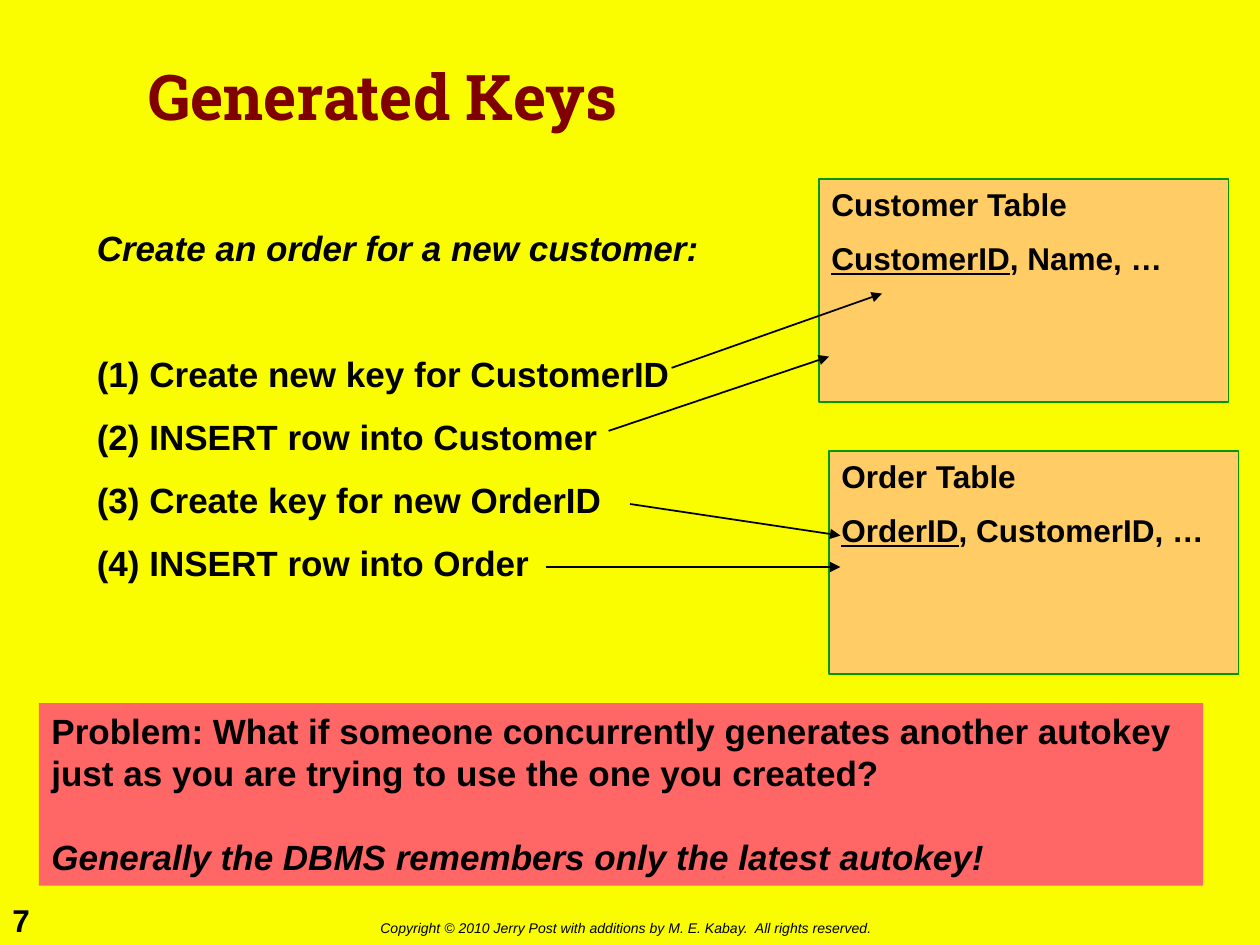
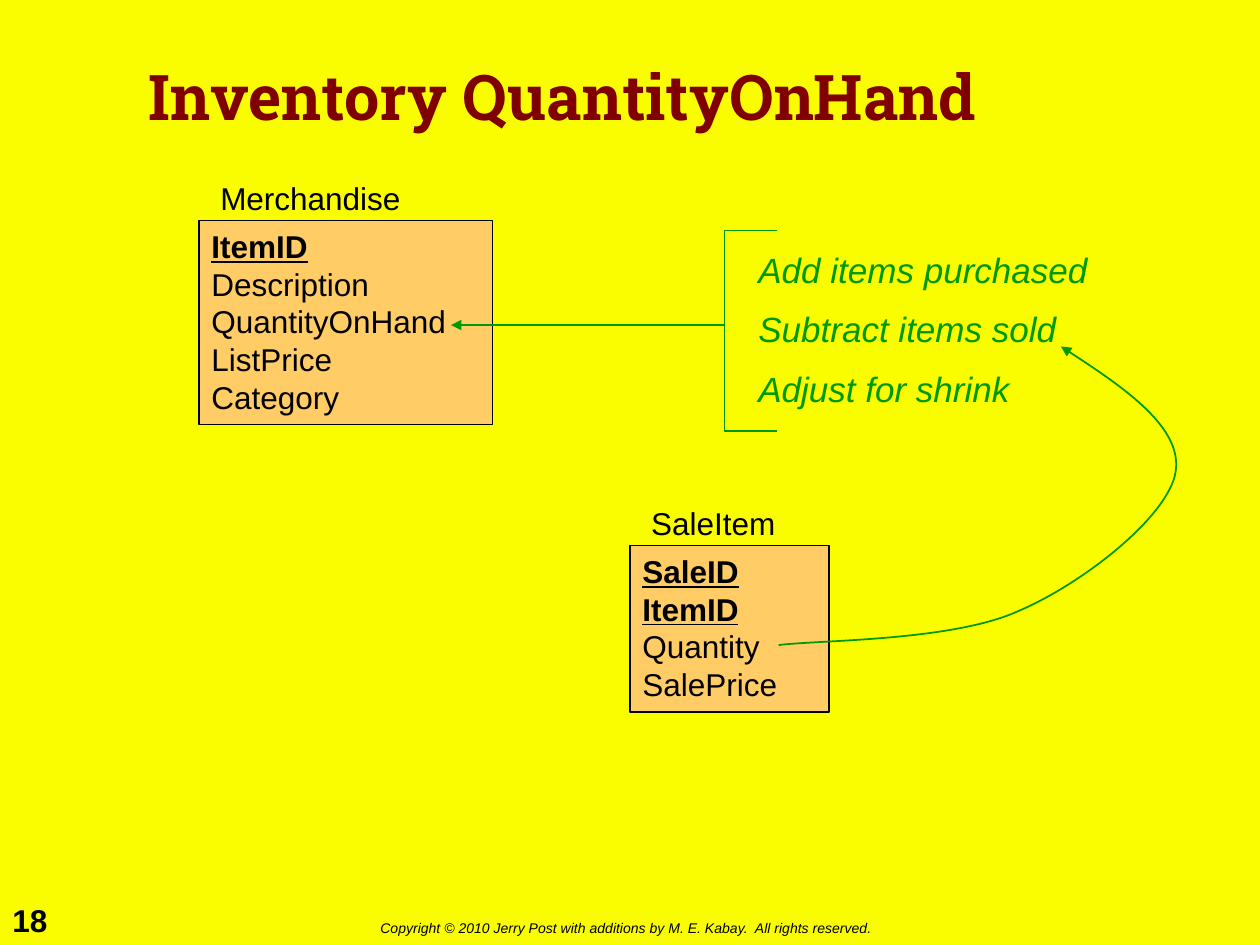
import pptx
import pptx.dml.color
import pptx.enum.shapes
import pptx.enum.text
import pptx.oxml
import pptx.oxml.ns
import pptx.util
from pptx.util import Inches, Pt

RGBColor = pptx.dml.color.RGBColor
YELLOW = RGBColor(0xFA, 0xFD, 0x00)
MAROON = RGBColor(0x80, 0x00, 0x00)
ORANGE = RGBColor(0xFF, 0xCC, 0x66)
CORAL = RGBColor(0xFF, 0x66, 0x66)
GREEN = RGBColor(0x00, 0x99, 0x00)
BLACK = RGBColor(0x00, 0x00, 0x00)
COPYRIGHT = "Copyright © 2010 Jerry Post with additions by M. E. Kabay.  All rights reserved."


def add_text(s, box, paragraphs, size, color=BLACK, face="Arial", gap=0,
             spacing=None, fill=None, line=None, wrap=True):
    """Add a text box, or a rectangle if filled.

    Each paragraph is (style, run, ...): b bold, i italic, u first run underlined.
    """
    box = [Inches(v) for v in box]
    if fill is None:
        sp = s.shapes.add_textbox(*box)
    else:
        sp = s.shapes.add_shape(pptx.enum.shapes.MSO_SHAPE.RECTANGLE, *box)
        sp.shadow.inherit = False
        sp.fill.solid()
        sp.fill.fore_color.rgb = fill
        if line is None:
            sp.line.fill.background()
        else:
            sp.line.color.rgb = line
            sp.line.width = Pt(1)
    tf = sp.text_frame
    tf.word_wrap = wrap
    tf.vertical_anchor = pptx.enum.text.MSO_ANCHOR.TOP
    for i, (style, *runs) in enumerate(paragraphs):
        p = tf.add_paragraph() if i else tf.paragraphs[0]
        p.alignment = pptx.enum.text.PP_ALIGN.LEFT
        if spacing:
            p.line_spacing = spacing
        if i and gap:
            p.space_before = Pt(gap)
        p.font.name = face
        p.font.size = Pt(size)
        p.font.color.rgb = color
        p.font.bold = "b" in style
        p.font.italic = "i" in style
        for text in runs:
            r = p.add_run()
            r.text = text
        if "u" in style:
            key_font = p.font if len(runs) == 1 else p.runs[0].font
            key_font.underline = True
    return sp


def style_line(sp, color, arrow=True):
    sp.line.color.rgb = color
    sp.line.width = Pt(1)
    if arrow:
        pptx.oxml.ns.qn("a:tailEnd")
        tail = pptx.oxml.parse_xml(
            '<a:tailEnd %s type="triangle"/>' % pptx.oxml.ns.nsdecls("a"))
        sp.line._get_or_add_ln().append(tail)
    sp._element.spPr.append(
        pptx.oxml.parse_xml("<a:effectLst %s/>" % pptx.oxml.ns.nsdecls("a")))


prs = pptx.Presentation()
prs.slide_width = Inches(10)
prs.slide_height = Inches(7.5)

# Background, number, copyright line and title on every slide
slides = []
for number, title in [("7", "Generated Keys"), ("18", "Inventory QuantityOnHand")]:
    s = prs.slides.add_slide(prs.slide_layouts[6])
    s.background.fill.solid()
    s.background.fill.fore_color.rgb = YELLOW
    add_text(s, (0, 7.1, 0.51, 0.4), [("b", number)], 18)
    add_text(s, (2.92, 7.25, 4.22, 0.24), [("i", COPYRIGHT)], 8, wrap=False)
    sp = add_text(s, (1.08, 0.17, 7.83, 1.25), [("b", title)], 36, MAROON,
                  "Roboto Slab", spacing=0.9)
    sp.text_frame.vertical_anchor = pptx.enum.text.MSO_ANCHOR.MIDDLE
    slides.append(s)
keys_slide, inventory_slide = slides

# Generated keys: steps, the tables they touch, and the problem
s = keys_slide
steps = add_text(s, (0.67, 1.58, 5.25, 3.6), [
    ("bi", "Create an order for a new customer:"),
    ("b", "(1) Create new key for CustomerID"),
    ("b", "(2) INSERT row into Customer"),
    ("b", "(3) Create key for new OrderID"),
    ("b", "(4) INSERT row into Order"),
], 20, spacing=1.5)
steps.text_frame.paragraphs[1].space_before = Pt(36)

for left, top, name, key, columns in [
    (6.5, 1.42, "Customer Table", "CustomerID", ", Name, …"),
    (6.58, 3.58, "Order Table", "OrderID", ", CustomerID, …"),
]:
    add_text(s, (left, top, 3.25, 1.77), [("b", name), ("bu", key, columns)], 18,
             gap=9, fill=ORANGE, line=GREEN)

problem = add_text(s, (0.31, 5.58, 9.24, 1.45), [
    ("b", "Problem: What if someone concurrently generates another autokey"),
    ("b", "just as you are trying to use the one you created?"),
    ("bi", "Generally the DBMS remembers only the latest autokey!"),
], 20, fill=CORAL)
problem.text_frame.paragraphs[2].space_before = Pt(24)

# Inventory: two tables with captions, and the stock changes
s = inventory_slide
for left, top, width, height, caption, caption_width, keys, columns in [
    (1.58, 1.75, 2.33, 1.62, "Merchandise", 1.63, ["ItemID"],
     ["Description", "QuantityOnHand", "ListPrice", "Category"]),
    (5, 4.33, 1.58, 1.32, "SaleItem", 1.19, ["SaleID", "ItemID"],
     ["Quantity", "SalePrice"]),
]:
    rows = [("bu", key) for key in keys] + [("", column) for column in columns]
    add_text(s, (left, top, width, height), rows, 18, fill=ORANGE, line=BLACK)
    add_text(s, (left + 0.07, top - 0.38, caption_width, 0.4), [("", caption)], 18,
             wrap=False)

changes = ["Add items purchased", "Subtract items sold", "Adjust for shrink"]
add_text(s, (5.92, 1.92, 3.08, 1.43), [("i", change) for change in changes], 20,
         GREEN, gap=10)

# Straight arrows
for s, color, x1, y1, x2, y2 in [
    (keys_slide, BLACK, 5.33, 2.92, 7, 2.33),
    (keys_slide, BLACK, 4.83, 3.42, 6.58, 2.83),
    (keys_slide, BLACK, 5, 4, 6.67, 4.25),
    (keys_slide, BLACK, 4.33, 4.5, 6.67, 4.5),
    (inventory_slide, GREEN, 5.75, 2.58, 3.58, 2.58),
]:
    arrow = s.shapes.add_connector(pptx.enum.shapes.MSO_CONNECTOR.STRAIGHT,
                                   Inches(x1), Inches(y1), Inches(x2), Inches(y2))
    style_line(arrow, color)

# Bracket beside the changes, and the curve from Quantity to "Subtract items sold"
bracket = [(6.17, 1.83), (5.75, 1.83), (5.75, 3.42), (6.17, 3.42)]
curve = [(6.18, 5.12), (6.49, 5.08), (7.53, 5.09), (8.06, 4.86), (8.59, 4.64),
         (9.27, 4.1), (9.33, 3.75), (9.39, 3.4), (8.9, 3.06), (8.42, 2.75)]
for points, curved in [(bracket, False), (curve, True)]:
    start, *rest = [(Inches(x), Inches(y)) for x, y in points]
    builder = inventory_slide.shapes.build_freeform(*start)
    builder.add_line_segments(rest, close=False)
    sp = builder.convert_to_shape()
    sp.fill.background()
    style_line(sp, GREEN, arrow=curved)
    if curved:
        # Every three points after the start make one Bezier segment
        segments = sp._element.xpath(".//a:lnTo")
        for i in range(0, len(segments), 3):
            bezier = pptx.oxml.parse_xml(
                "<a:cubicBezTo %s/>" % pptx.oxml.ns.nsdecls("a"))
            segments[i].addprevious(bezier)
            for segment in segments[i:i + 3]:
                bezier.append(segment[0])
                segment.getparent().remove(segment)

prs.save("out.pptx")
